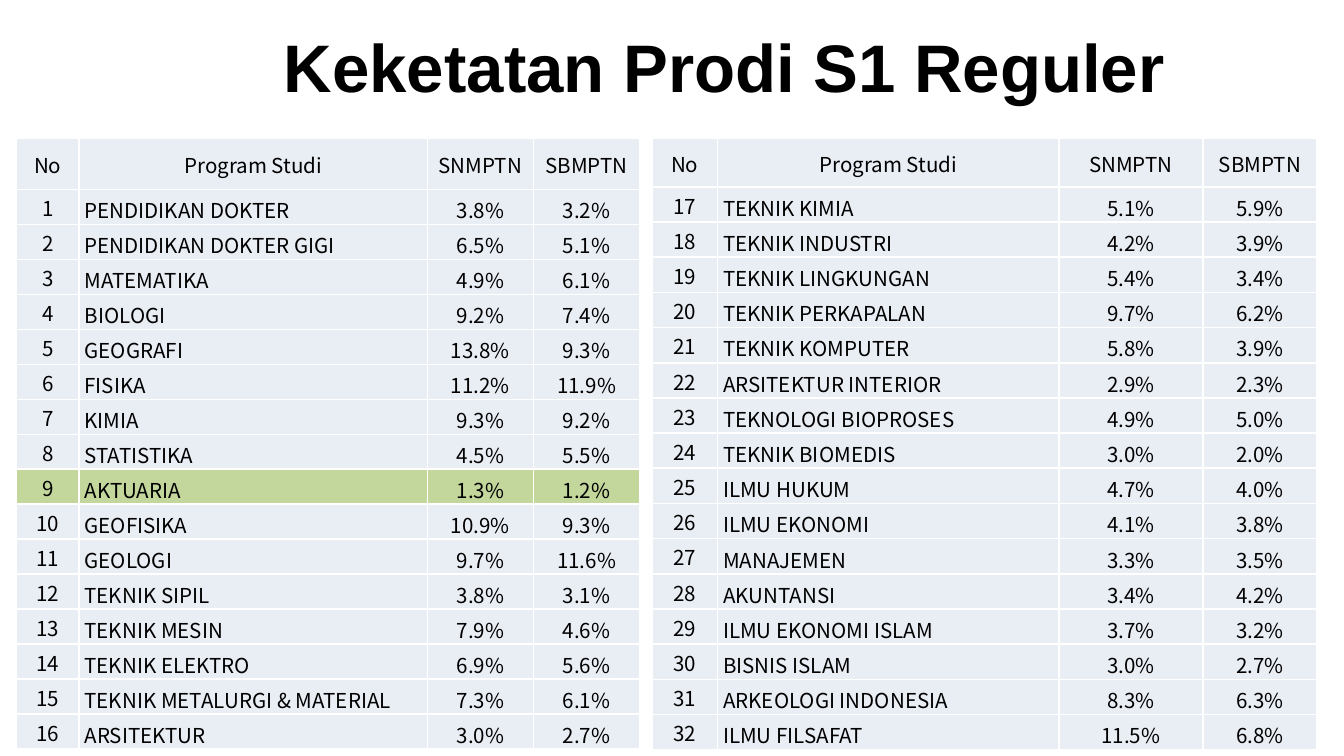
from lxml import etree
from pptx import Presentation
from pptx.dml.color import RGBColor
from pptx.enum.text import MSO_ANCHOR, PP_ALIGN
from pptx.oxml.ns import qn
from pptx.util import Inches, Pt

LEFT, CENTER = PP_ALIGN.LEFT, PP_ALIGN.CENTER
MIDDLE, BOTTOM = MSO_ANCHOR.MIDDLE, MSO_ANCHOR.BOTTOM

PAGE_WIDTH = 10
PAGE_HEIGHT = PAGE_WIDTH * 9 / 16
BLACK, WHITE, PALE, GREEN = "000000", "FFFFFF", "E9EDF4", "C3D69B"
TITLE_FONT, TABLE_FONT = "Arial", "Noto Sans CJK KR"
HEADER = ("No", "Program Studi", "SNMPTN", "SBMPTN")
HIGHLIGHT = "AKTUARIA"

PROGRAMS = [
    ("PENDIDIKAN DOKTER", "3.8%", "3.2%"),
    ("PENDIDIKAN DOKTER GIGI", "6.5%", "5.1%"),
    ("MATEMATIKA", "4.9%", "6.1%"),
    ("BIOLOGI", "9.2%", "7.4%"),
    ("GEOGRAFI", "13.8%", "9.3%"),
    ("FISIKA", "11.2%", "11.9%"),
    ("KIMIA", "9.3%", "9.2%"),
    ("STATISTIKA", "4.5%", "5.5%"),
    ("AKTUARIA", "1.3%", "1.2%"),
    ("GEOFISIKA", "10.9%", "9.3%"),
    ("GEOLOGI", "9.7%", "11.6%"),
    ("TEKNIK SIPIL", "3.8%", "3.1%"),
    ("TEKNIK MESIN", "7.9%", "4.6%"),
    ("TEKNIK ELEKTRO", "6.9%", "5.6%"),
    ("TEKNIK METALURGI & MATERIAL", "7.3%", "6.1%"),
    ("ARSITEKTUR", "3.0%", "2.7%"),
    ("TEKNIK KIMIA", "5.1%", "5.9%"),
    ("TEKNIK INDUSTRI", "4.2%", "3.9%"),
    ("TEKNIK LINGKUNGAN", "5.4%", "3.4%"),
    ("TEKNIK PERKAPALAN", "9.7%", "6.2%"),
    ("TEKNIK KOMPUTER", "5.8%", "3.9%"),
    ("ARSITEKTUR INTERIOR", "2.9%", "2.3%"),
    ("TEKNOLOGI BIOPROSES", "4.9%", "5.0%"),
    ("TEKNIK BIOMEDIS", "3.0%", "2.0%"),
    ("ILMU HUKUM", "4.7%", "4.0%"),
    ("ILMU EKONOMI", "4.1%", "3.8%"),
    ("MANAJEMEN", "3.3%", "3.5%"),
    ("AKUNTANSI", "3.4%", "4.2%"),
    ("ILMU EKONOMI ISLAM", "3.7%", "3.2%"),
    ("BISNIS ISLAM", "3.0%", "2.7%"),
    ("ARKEOLOGI INDONESIA", "8.3%", "6.3%"),
    ("ILMU FILSAFAT", "11.5%", "6.8%"),
]


def color(value):
    """Turn a hex string into a colour."""
    return RGBColor.from_string(value)


def add_span(para, text, size, font, bold=False):
    """Add one black run to a paragraph."""
    span = para.add_run()
    span.text = text
    span.font.size = Pt(size)
    span.font.name = font
    span.font.bold = bold
    span.font.color.rgb = color(BLACK)


def add_borders(cell):
    """Draw a thin white line on every side of a cell."""
    properties = cell._tc.get_or_add_tcPr()
    for side in ("a:lnL", "a:lnR", "a:lnT", "a:lnB"):
        line = etree.SubElement(properties, qn(side), w=str(Pt(1)))
        fill = etree.SubElement(line, qn("a:solidFill"))
        etree.SubElement(fill, qn("a:srgbClr"), val=WHITE)


def fill_cell(cell, text, fill, align, anchor):
    """Style a cell and write its text."""
    add_borders(cell)
    cell.fill.solid()
    cell.fill.fore_color.rgb = color(fill)
    cell.vertical_anchor = anchor
    cell.margin_left = Inches(0.04 if align == LEFT else 0.01)
    cell.margin_right = cell.margin_top = Inches(0.01)
    cell.margin_bottom = 0
    para = cell.text_frame.paragraphs[0]
    para.alignment = align
    add_span(para, text, 11, TABLE_FONT)


def add_title(page, left, top, width, height):
    """Place the centred page title."""
    box = page.shapes.add_textbox(Inches(left), Inches(top), Inches(width), Inches(height))
    frame = box.text_frame
    frame.word_wrap = True
    frame.vertical_anchor = MIDDLE
    para = frame.paragraphs[0]
    para.alignment = CENTER
    add_span(para, "Keketatan Prodi S1 Reguler", 36, TITLE_FONT, bold=True)


def add_program_table(page, left, top, height, widths, header_height, first, programs):
    """Place a numbered table of programs with their admission rates."""
    frame = page.shapes.add_table(len(programs) + 1, len(HEADER), Inches(left), Inches(top),
                                  Inches(sum(widths)), Inches(height))
    table = frame.table
    for column, width in zip(table.columns, widths):
        column.width = Inches(width)
    row_height = (height - header_height) / len(programs)
    for index, row in enumerate(table.rows):
        row.height = Inches(row_height if index else header_height)
    for column, text in enumerate(HEADER):
        fill_cell(table.cell(0, column), text, PALE, CENTER, MIDDLE)
    for row, program in enumerate(programs, 1):
        fill = GREEN if program[0] == HIGHLIGHT else PALE
        for column, text in enumerate((str(first + row - 1), *program)):
            align = LEFT if column == 1 else CENTER
            anchor = BOTTOM if column else MIDDLE
            fill_cell(table.cell(row, column), text, fill, align, anchor)


def main():
    """Build the deck and save it."""
    deck = Presentation()
    deck.slide_width, deck.slide_height = Inches(PAGE_WIDTH), Inches(PAGE_HEIGHT)
    page = deck.slides.add_slide(deck.slide_layouts[6])
    add_title(page, 1.06, 0.2, 8.66, 0.57)
    half = len(PROGRAMS) // 2
    add_program_table(page, 0.12, 1.03, 4.55, (0.47, 2.59, 0.79, 0.79), 0.38,
                      1, PROGRAMS[:half])
    add_program_table(page, 4.85, 1.03, 4.55, (0.49, 2.54, 1.07, 0.85), 0.36,
                      half + 1, PROGRAMS[half:])
    deck.save("out.pptx")


if __name__ == "__main__":
    main()
